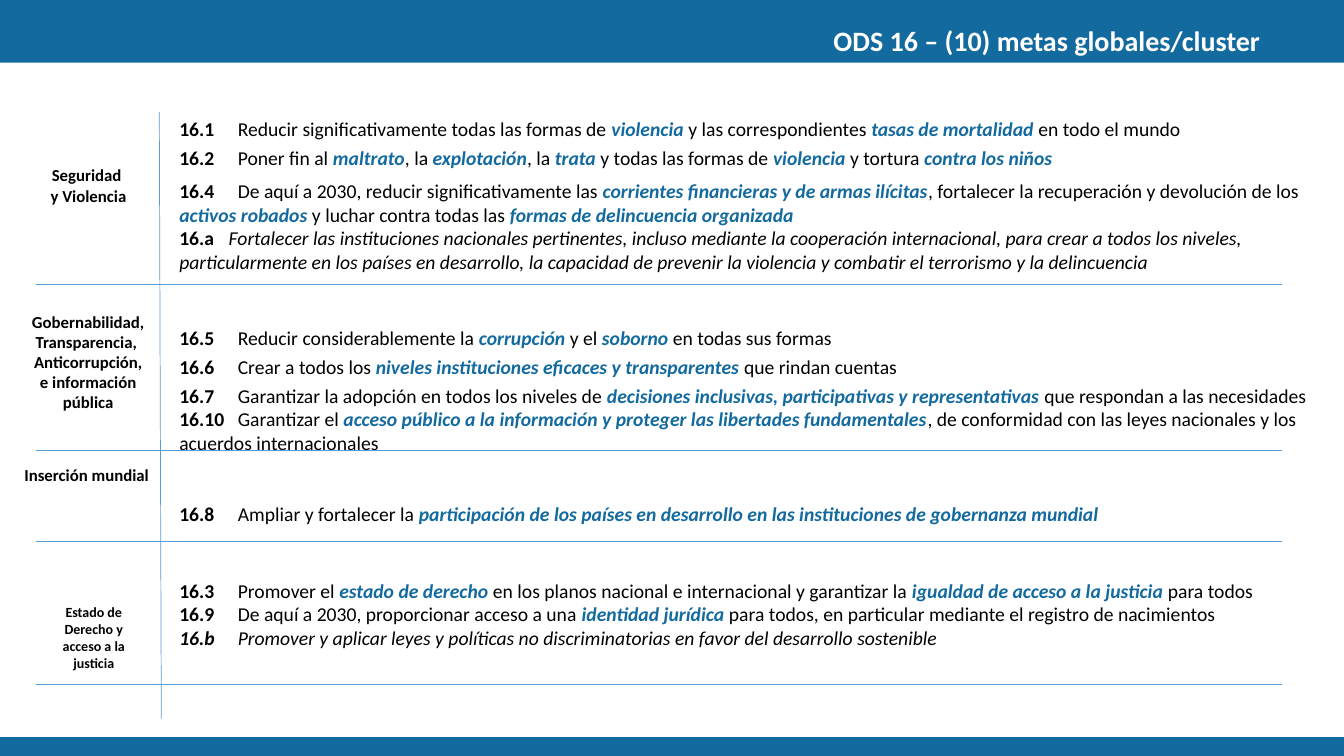
from lxml import etree
from pptx import Presentation
from pptx import util as u
from pptx.dml.color import RGBColor
from pptx.enum import shapes, text
from pptx.oxml.ns import qn

COLORS = {"blue": "136A9F", "white": "FFFFFF", "black": "000000", "rule": "5B9BD5"}
LEFT, CENTER, RIGHT = text.PP_ALIGN.LEFT, text.PP_ALIGN.CENTER, text.PP_ALIGN.RIGHT

prs = Presentation()
prs.slide_width, prs.slide_height = u.Inches(13.33), u.Inches(7.5)
s = prs.slides.add_slide(prs.slide_layouts[6])
s.background.fill.solid()
s.background.fill.fore_color.rgb = RGBColor.from_string(COLORS["blue"])


def add_box(left, top, width, height, wrap=True):
    tf = s.shapes.add_textbox(*map(u.Inches, (left, top, width, height))).text_frame
    tf.word_wrap = wrap
    return tf


def add_run(p, content, size, color="black", bold=False, italic=False):
    r = p.add_run()
    r.text = content
    r.font.name, r.font.size = "Calibri", u.Pt(size)
    r.font.bold, r.font.italic = bold, italic
    r.font.color.rgb = RGBColor.from_string(COLORS[color])


panel = s.shapes.add_shape(shapes.MSO_SHAPE.RECTANGLE, 0, u.Inches(0.62), prs.slide_width, u.Inches(6.69))
panel.shadow.inherit = False
panel.fill.solid()
panel.fill.fore_color.rgb = RGBColor.from_string(COLORS["white"])
panel.line.fill.background()

# Fields: space before, number, tab stop, italic number, italic body, body with *key terms*
targets = [
    (0, "16.1", 0.58, False, False, "Reducir significativamente todas las formas de *violencia *y las correspondientes *tasas de mortalidad *en todo el mundo"),
    (3.66, "16.2", 0.58, False, False, "Poner fin al *maltrato*, la *explotación*, la *trata *y todas las formas de *violencia *y tortura *contra los niños*"),
    (7.32, "16.4", 0.58, False, False, "De aquí a 2030, reducir significativamente las *corrientes financieras y de armas ilícitas*, fortalecer la recuperación y devolución de los\n*activos robados *y luchar contra todas las *formas de delincuencia organizada*"),
    (0, "16.a", 0.49, False, True, "Fortalecer las instituciones nacionales pertinentes, incluso mediante la cooperación internacional, para crear a todos los niveles,\nparticularmente en los países en desarrollo, la capacidad de prevenir la violencia y combatir el terrorismo y la delincuencia"),
    (37.84, "16.5", 0.58, False, False, "Reducir considerablemente la *corrupción *y el *soborno *en todas sus formas"),
    (3.66, "16.6", 0.58, False, False, "Crear a todos los *niveles instituciones eficaces y transparentes *que rindan cuentas"),
    (3.66, "16.7", 0.58, False, False, "Garantizar la adopción en todos los niveles de *decisiones inclusivas, participativas y representativas *que respondan a las necesidades"),
    (0, "16.10", 0.58, False, False, "Garantizar el *acceso público a la información y proteger las libertades fundamentales*, de conformidad con las leyes nacionales y los\nacuerdos internacionales"),
    (34.18, "16.8", 0.58, False, False, "Ampliar y fortalecer la *participación de los países en desarrollo en las instituciones de gobernanza mundial*"),
    (37.84, "16.3", 0.58, False, False, "Promover el *estado de derecho *en los planos nacional e internacional y garantizar la *igualdad de acceso a la justicia *para todos"),
    (0, "16.9", 0.58, False, False, "De aquí a 2030, proporcionar acceso a una *identidad jurídica *para todos, en particular mediante el registro de nacimientos"),
    (0, "16.b", 0.58, True, True, "Promover y aplicar leyes y políticas no discriminatorias en favor del desarrollo sostenible"),
]
tf = add_box(1.68, 1.11, 11.79, 5.74)
for i, (gap, number, tab, number_italic, body_italic, body) in enumerate(targets):
    p = tf.paragraphs[0] if i == 0 else tf.add_paragraph()
    p.alignment = LEFT
    p.space_before = u.Pt(gap)
    tabs = etree.SubElement(p._p.get_or_add_pPr(), qn("a:tabLst"))
    etree.SubElement(tabs, qn("a:tab"), pos=str(u.Inches(tab)), algn="l")
    add_run(p, number, 14, bold=True, italic=number_italic)
    for j, part in enumerate((" \t" + body).split("*")):
        key = j % 2 == 1
        for k, line in enumerate(part.split("\n")):
            if k:
                p.add_line_break()
            if line:
                add_run(p, line, 14, "blue" if key else "black", key, key or body_italic)

labels = [
    ((2.69, 0.18, 9.91, 0.44), True, RIGHT, 20, "white", ["ODS 16 – (10) metas globales/cluster"]),
    ((0.36, 1.59, 1, 0.5), False, CENTER, 12, "black", ["Seguridad", " y Violencia"]),
    ((0.2, 3.04, 1.35, 1.11), True, CENTER, 12, "black",
     ["Gobernabilidad, Transparencia, ", "Anticorrupción, e información pública"]),
    ((0.13, 4.56, 1.46, 0.3), False, CENTER, 12, "black", ["Inserción mundial"]),
    ((0.36, 5.94, 1.14, 0.77), True, CENTER, 10, "black", ["Estado de Derecho y acceso a la justicia"]),
]
for place, wrap, align, size, color, lines in labels:
    tf = add_box(*place, wrap)
    for i, line in enumerate(lines):
        p = tf.paragraphs[0] if i == 0 else tf.add_paragraph()
        p.alignment = align
        add_run(p, line, size, color, bold=True)

rules = [(1.58, 1.11, 1.6, 7.13)] + [(12.72, y, 0.36, y) for y in (2.82, 4.47, 5.37, 6.79)]
for ends in rules:
    rule = s.shapes.add_connector(shapes.MSO_CONNECTOR.STRAIGHT, *map(u.Inches, ends))
    rule.line.color.rgb = RGBColor.from_string(COLORS["rule"])
    rule.line.width = u.Pt(0.5)
    etree.SubElement(rule._element.spPr, qn("a:effectLst"))

prs.save("out.pptx")
